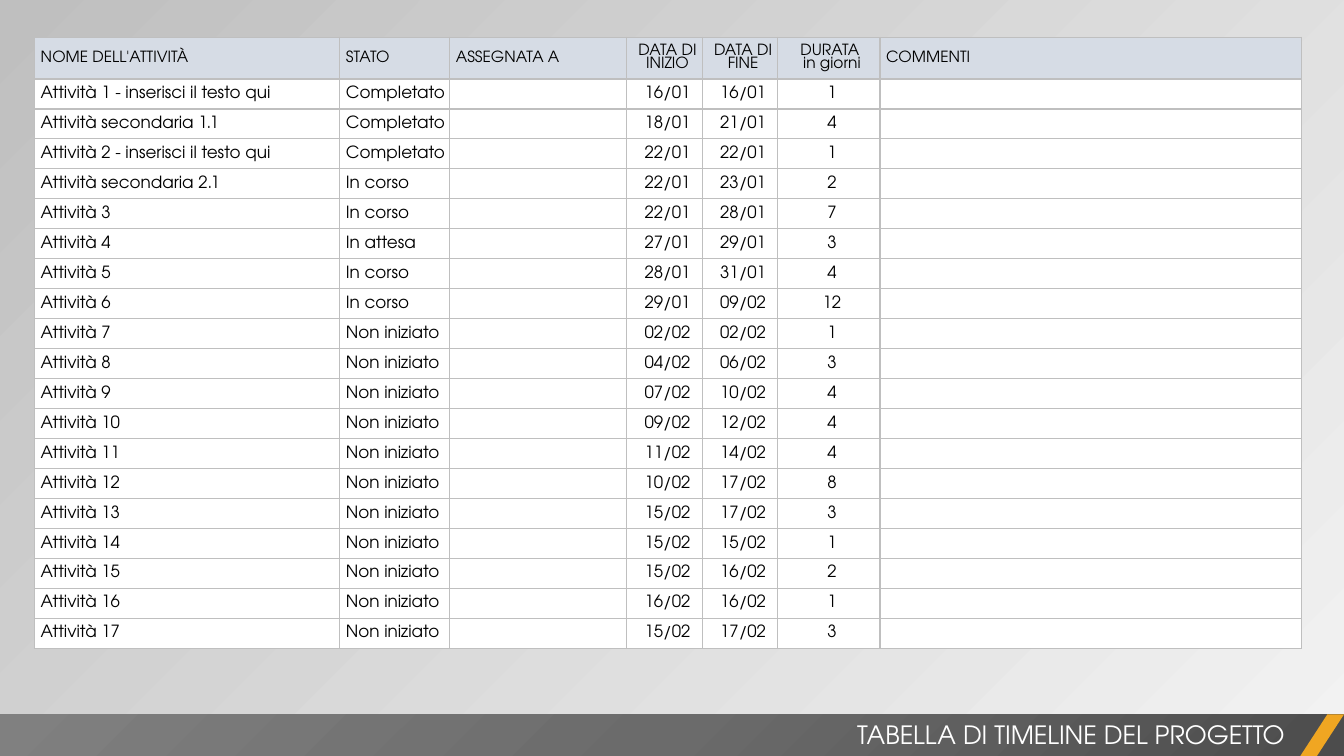
from copy import deepcopy
from dataclasses import dataclass

from lxml import etree
from pptx import Presentation
from pptx.dml.color import RGBColor
from pptx.enum.shapes import MSO_SHAPE
from pptx.enum.text import MSO_ANCHOR, MSO_AUTO_SIZE, PP_ALIGN
from pptx.oxml.ns import qn
from pptx.shapes.autoshape import Shape
from pptx.slide import Slide
from pptx.table import _Cell
from pptx.util import Pt

LEFT, CENTER, RIGHT = PP_ALIGN.LEFT, PP_ALIGN.CENTER, PP_ALIGN.RIGHT
MIDDLE = MSO_ANCHOR.MIDDLE
GROW = MSO_AUTO_SIZE.SHAPE_TO_FIT_TEXT
RECTANGLE, PARALLELOGRAM = MSO_SHAPE.RECTANGLE, MSO_SHAPE.PARALLELOGRAM

FONT = "TeX Gyre Adventor"
BLACK, WHITE, ORANGE = "000000", "FFFFFF", "F0A622"
HEADER_FILL, BORDER = "D6DCE5", "BFBFBF"
PAGE_WIDTH, PAGE_HEIGHT = 960, 540
FOOTER_TOP, FOOTER_HEIGHT = 510.3, 29.7
HEADER_HEIGHT, ROW_HEIGHT = 29.64, 21.41


@dataclass
class Column:
    heading: str
    width: float
    align: PP_ALIGN = LEFT


@dataclass
class Task:
    name: str
    status: str
    start: str
    end: str
    days: int

    def cells(self) -> list[str]:
        return [self.name, self.status, "", self.start, self.end, str(self.days), ""]


COLUMNS = [
    Column("NOME DELL'ATTIVITÀ", 218),
    Column("STATO", 78.6),
    Column("ASSEGNATA A", 126.4),
    Column("DATA DI INIZIO", 54, CENTER),
    Column("DATA DI FINE", 54, CENTER),
    Column("DURATA \nin giorni", 73, CENTER),
    Column("COMMENTI", 301),
]

DONE, ACTIVE, WAITING, PENDING = "Completato", "In corso", "In attesa", "Non iniziato"
TASKS = [
    Task("Attività 1 - inserisci il testo qui", DONE, "16/01", "16/01", 1),
    Task("Attività secondaria 1.1", DONE, "18/01", "21/01", 4),
    Task("Attività 2 - inserisci il testo qui", DONE, "22/01", "22/01", 1),
    Task("Attività secondaria 2.1", ACTIVE, "22/01", "23/01", 2),
    Task("Attività 3", ACTIVE, "22/01", "28/01", 7),
    Task("Attività 4", WAITING, "27/01", "29/01", 3),
    Task("Attività 5", ACTIVE, "28/01", "31/01", 4),
    Task("Attività 6", ACTIVE, "29/01", "09/02", 12),
    Task("Attività 7", PENDING, "02/02", "02/02", 1),
    Task("Attività 8", PENDING, "04/02", "06/02", 3),
    Task("Attività 9", PENDING, "07/02", "10/02", 4),
    Task("Attività 10", PENDING, "09/02", "12/02", 4),
    Task("Attività 11", PENDING, "11/02", "14/02", 4),
    Task("Attività 12", PENDING, "10/02", "17/02", 8),
    Task("Attività 13", PENDING, "15/02", "17/02", 3),
    Task("Attività 14", PENDING, "15/02", "15/02", 1),
    Task("Attività 15", PENDING, "15/02", "16/02", 2),
    Task("Attività 16", PENDING, "16/02", "16/02", 1),
    Task("Attività 17", PENDING, "15/02", "17/02", 3),
]


def color(value: str) -> RGBColor:
    return RGBColor.from_string(value)


def write_text(frame, text: str, size: float, ink: str, align: PP_ALIGN,
               spacing: float = 1.0) -> None:
    frame.text = text
    for para in frame.paragraphs:
        para.alignment = align
        para.line_spacing = spacing
        for span in para.runs:
            span.font.name = FONT
            span.font.size = Pt(size)
            span.font.color.rgb = color(ink)
        if not para.runs:
            # An empty cell keeps the row height only with a small text size
            etree.SubElement(para._p, qn("a:endParaRPr"), sz=str(int(size * 100)))


def add_borders(cell: _Cell) -> None:
    properties = cell._tc.get_or_add_tcPr()
    for side in ("a:lnL", "a:lnR", "a:lnT", "a:lnB"):
        line = etree.SubElement(properties, qn(side), w=str(Pt(1)))
        fill = etree.SubElement(line, qn("a:solidFill"))
        etree.SubElement(fill, qn("a:srgbClr"), val=BORDER)


def fill_cell(cell: _Cell, text: str, size: float, fill: str, align: PP_ALIGN,
              spacing: float = 1.0) -> None:
    cell.margin_left = Pt(4.5)
    cell.margin_right = cell.margin_top = cell.margin_bottom = 0
    cell.vertical_anchor = MIDDLE
    add_borders(cell)
    cell.fill.solid()
    cell.fill.fore_color.rgb = color(fill)
    write_text(cell.text_frame, text, size, BLACK, align, spacing)


def set_background(page: Slide) -> None:
    fill = page.background.fill
    fill.gradient()
    fill.gradient_angle = 135
    for stop, shade in zip(fill.gradient_stops, ("F2F2F2", "BFBFBF")):
        stop.color.rgb = color(shade)


def add_task_table(page: Slide) -> None:
    width = sum(column.width for column in COLUMNS)
    height = HEADER_HEIGHT + ROW_HEIGHT * len(TASKS)
    table = page.shapes.add_table(len(TASKS) + 1, len(COLUMNS), Pt(24.6), Pt(26.8),
                                  Pt(width), Pt(height)).table
    table.first_row = table.horz_banding = False
    for row in table.rows:
        row.height = Pt(ROW_HEIGHT)
    table.rows[0].height = Pt(HEADER_HEIGHT)
    for index, column in enumerate(COLUMNS):
        table.columns[index].width = Pt(column.width)
        fill_cell(table.cell(0, index), column.heading, 11, HEADER_FILL, column.align, 0.9)
        for number, task in enumerate(TASKS, start=1):
            fill_cell(table.cell(number, index), task.cells()[index], 12, WHITE, column.align)


def add_footer_shape(page: Slide, kind: MSO_SHAPE, left: float) -> Shape:
    shape = page.shapes.add_shape(kind, Pt(left), Pt(FOOTER_TOP),
                                  Pt(PAGE_WIDTH - left), Pt(FOOTER_HEIGHT))
    shape.shadow.inherit = False
    shape.line.fill.background()
    return shape


def add_footer(page: Slide) -> None:
    # Bar with a radial gradient centred on its lower right corner
    bar = add_footer_shape(page, RECTANGLE, 0)
    bar.fill.gradient()
    gradient = bar.element.spPr.find(qn("a:gradFill"))
    stops = gradient.find(qn("a:gsLst"))
    stops.insert(1, deepcopy(stops[0]))
    shades = ((0, "4C4C4C"), (0.5, "6B6B6B"), (1, "808080"))
    for stop, (position, shade) in zip(bar.fill.gradient_stops, shades):
        stop.position = position
        stop.color.rgb = color(shade)
    gradient.remove(gradient.find(qn("a:lin")))
    radial = etree.SubElement(gradient, qn("a:path"), {"path": "circle"})
    etree.SubElement(radial, qn("a:fillToRect"), l="100000", t="100000")

    # Orange accent
    accent = add_footer_shape(page, PARALLELOGRAM, 928.8)
    accent.adjustments[0] = 0.65
    accent.fill.solid()
    accent.fill.fore_color.rgb = color(ORANGE)


def place_title(page: Slide) -> None:
    title = page.shapes.title
    title.left, title.top, title.width, title.height = Pt(378), Pt(510), Pt(547), Pt(29)
    frame = title.text_frame
    frame.word_wrap = True
    frame.auto_size = GROW
    frame.vertical_anchor = MIDDLE
    write_text(frame, "TABELLA DI TIMELINE DEL PROGETTO", 18, WHITE, RIGHT)
    # Bring the title in front of the footer bar
    title.element.getparent().append(title.element)


def main() -> None:
    deck = Presentation()
    deck.slide_width, deck.slide_height = Pt(PAGE_WIDTH), Pt(PAGE_HEIGHT)
    page = deck.slides.add_slide(deck.slide_layouts[5])
    set_background(page)
    add_task_table(page)
    add_footer(page)
    place_title(page)
    deck.save("out.pptx")


if __name__ == "__main__":
    main()
